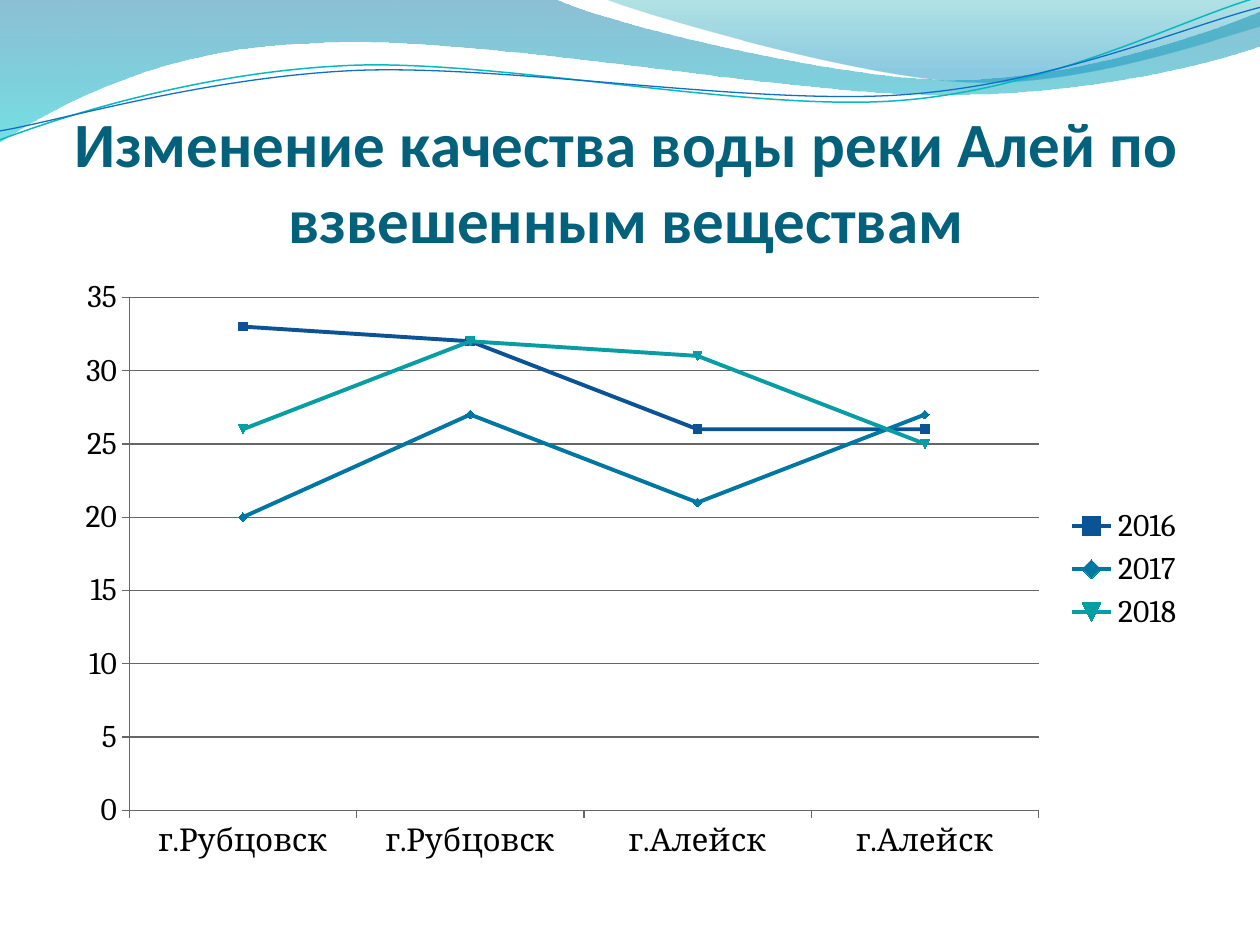
"""Build a slide with a line chart of water quality in the Aley river."""
from lxml.etree import SubElement
from pptx import Presentation
from pptx.chart.data import CategoryChartData
from pptx.dml.color import RGBColor
from pptx.enum.chart import XL_CHART_TYPE, XL_LEGEND_POSITION, XL_TICK_MARK
from pptx.enum.text import MSO_ANCHOR, MSO_AUTO_SIZE, PP_ALIGN
from pptx.oxml.ns import qn
from pptx.util import Cm, Pt


def color(value):
    return RGBColor.from_string(value)


def add_wave(shapes, start, segments, close):
    builder = shapes.build_freeform(Cm(start[0]), Cm(start[1]))
    points = [(Cm(x), Cm(y)) for seg in segments for x, y in seg]
    builder.add_line_segments(points, close=close)
    sp = builder.convert_to_shape()
    sp.shadow.inherit = False
    lines = iter(list(sp.element.spPr.iter(qn("a:lnTo"))))
    for seg in segments:
        steps = [next(lines) for _ in seg]
        if len(steps) == 3:
            steps[0].tag = qn("a:cubicBezTo")
            for step in steps[1:]:
                steps[0].append(step[0])
                step.getparent().remove(step)
    return sp


prs = Presentation()
prs.slide_width, prs.slide_height = Cm(25.4), Cm(19.05)
s = prs.slides.add_slide(prs.slide_layouts[5])

bands = [
    ((0, 0),
     [[(11.18, -0.03)],
      [(12.09, 0.43), (16.87, 1.6), (19.25, 1.6)],
      [(21.67, 1.6), (24.33, 0.66), (25.4, 0.23)],
      [(25.43, 0.91)],
      [(24.97, 1.12), (22.1, 1.93), (18.95, 1.91)],
      [(15.8, 1.91), (9.7, 0.71), (6.53, 0.86)],
      [(3.28, 0.91), (1.17, 2.11), (-0.03, 2.87)]],
     [(0, "0074A1", 45), (1, "00C6CF", 55)]),
    ((12.17, -0.03),
     [[(12.93, 0.28), (17.32, 1.57), (19.53, 1.65)],
      [(21.74, 1.75), (24.41, 0.81), (25.4, 0.53)],
      [(25.4, 0)]],
     [(0, "00A1A9", 30), (0.8, "008BBF", 45)]),
]
for start, segments, stops in bands:
    sp = add_wave(s.shapes, start, segments, True)
    sp.line.fill.background()
    sp.fill.gradient()
    sp.fill.gradient_angle = 270
    for stop, (position, value, _) in zip(sp.fill.gradient_stops, stops):
        stop.position = position
        stop.color.rgb = color(value)
    for clr, (_, _, opacity) in zip(sp.element.spPr.iter(qn("a:srgbClr")), stops):
        SubElement(clr, qn("a:alpha")).set("val", str(opacity * 1000))

threads = [
    ((0, 2.82),
     [[(1.22, 2.36), (4.01, 1.45), (7.04, 1.32)],
      [(10.03, 1.19), (15.06, 2.26), (18.11, 2.03)],
      [(21.16, 1.8), (23.83, 0.38), (25.35, -0.05)]],
     "0AB8BF", 0.85),
    ((0, 2.64),
     [[(1.19, 2.44), (4.17, 1.55), (7.19, 1.42)],
      [(10.24, 1.3), (15.16, 2.13), (18.21, 1.91)],
      [(21.23, 1.7), (23.9, 0.53), (25.4, 0.15)]],
     "0F6FC6", 0.75),
]
for start, segments, value, width in threads:
    sp = add_wave(s.shapes, start, segments, False)
    sp.fill.background()
    sp.line.color.rgb = color(value)
    sp.line.width = Pt(width)

title = s.shapes.title
title.left, title.top, title.width, title.height = Cm(1.19), Cm(2.39), Cm(22.86), Cm(2.77)
tf = title.text_frame
tf.text = "Изменение качества воды реки Алей по взвешенным веществам"
tf.word_wrap = True
tf.auto_size = MSO_AUTO_SIZE.NONE
tf.vertical_anchor = MSO_ANCHOR.BOTTOM
tf.margin_left = tf.margin_right = tf.margin_bottom = 0
tf.margin_top = Cm(0.13)
p = tf.paragraphs[0]
p.alignment = PP_ALIGN.CENTER
p.font.name, p.font.size, p.font.bold = "Calibri", Pt(36), True
p.font.color.rgb = color("04617B")

series = [
    ("2016", (33, 32, 26, 26), "0B5395"),
    ("2017", (20, 27, 21, 27), "0076A3"),
    ("2018", (26, 32, 31, 25), "089CA3"),
]
data = CategoryChartData()
data.categories = ["г.Рубцовск", "г.Рубцовск", "г.Алейск", "г.Алейск"]
for name, values, _ in series:
    data.add_series(name, values)
chart = s.shapes.add_chart(XL_CHART_TYPE.LINE_MARKERS, Cm(1.27), Cm(5.38),
                           Cm(22.86), Cm(12.19), data).chart
chart.has_title = False
chart.font.name, chart.font.size = "Cambria", Pt(18)
chart.font.color.rgb = color("000000")
chart.has_legend = True
chart.legend.position = XL_LEGEND_POSITION.RIGHT
chart.legend.include_in_layout = False
chart.plots[0].vary_by_categories = False
for ser, (_, _, value) in zip(chart.plots[0].series, series):
    ser.smooth = False
    ser.format.line.color.rgb = color(value)
    ser.format.line.width = Pt(2.25)

axis = chart.value_axis
axis.minimum_scale, axis.maximum_scale, axis.major_unit = 0, 35, 5
axis.has_major_gridlines = True
for line in (axis.format.line, axis.major_gridlines.format.line, chart.category_axis.format.line):
    line.color.rgb = color("666666")
    line.width = Pt(0.75)
for axis in (chart.value_axis, chart.category_axis):
    axis.major_tick_mark = XL_TICK_MARK.OUTSIDE
    axis.minor_tick_mark = XL_TICK_MARK.NONE

prs.save("out.pptx")
